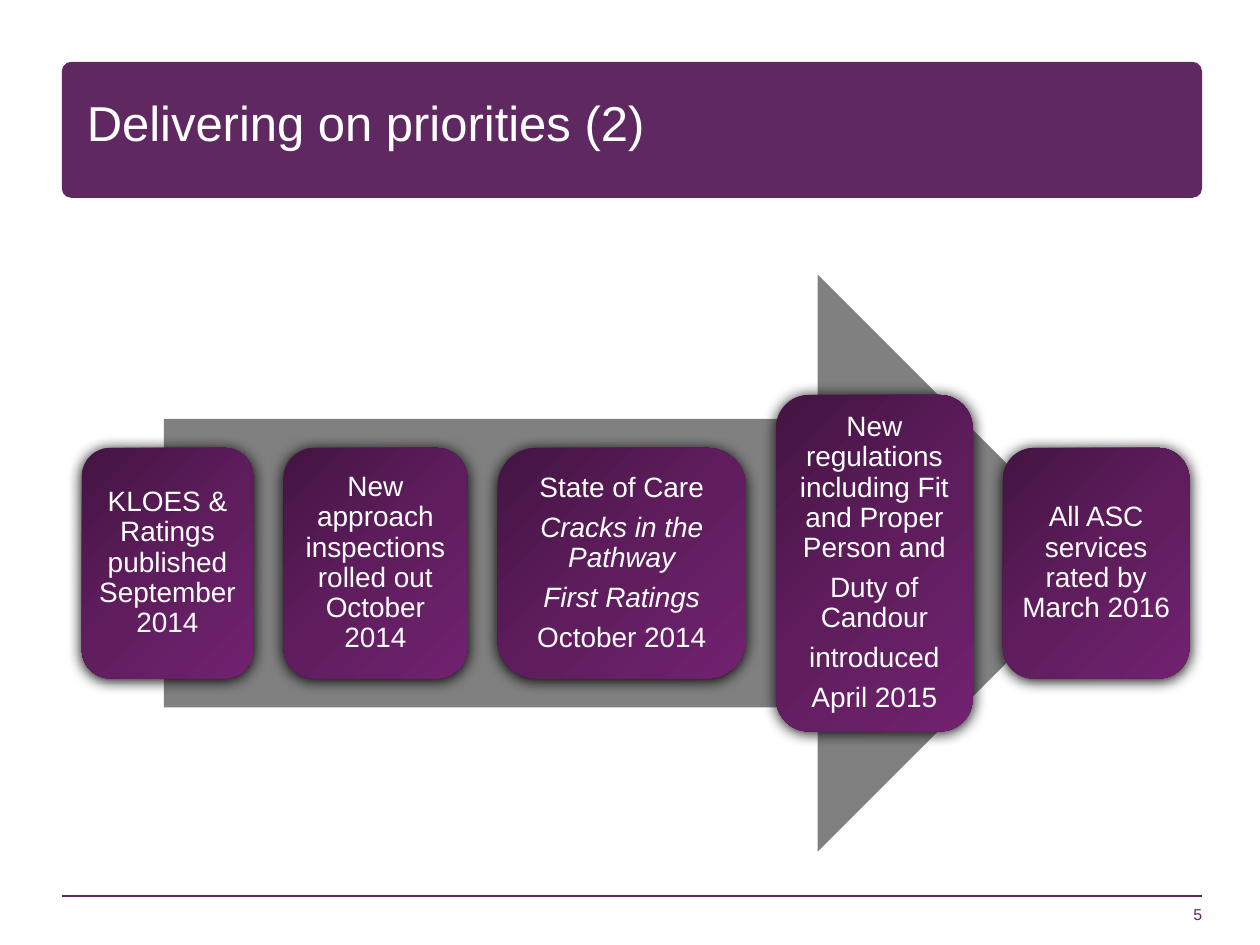
from lxml import etree
from pptx import Presentation
from pptx.dml.color import RGBColor
from pptx.enum.shapes import MSO_CONNECTOR, MSO_SHAPE
from pptx.enum.text import MSO_ANCHOR, PP_ALIGN
from pptx.oxml import parse_xml
from pptx.oxml.ns import nsdecls, qn
from pptx.util import Inches, Pt

# Content: (width, height, [(paragraph, italic), ...])
TITLE = "Delivering on priorities (2)"
PAGE_NUMBER = "5"
MILESTONES = [
    (1.36, 1.83, [("KLOES & Ratings published September 2014", False)]),
    (1.46, 1.83, [("New approach inspections rolled out October 2014", False)]),
    (1.97, 1.83, [("State of Care", False), ("Cracks in the Pathway", True),
                  ("First Ratings", True), ("October 2014", False)]),
    (1.56, 2.67, [("New regulations including Fit and Proper Person and", False),
                  ("Duty of Candour", False), ("introduced", False),
                  ("April 2015", False)]),
    (1.48, 1.83, [("All ASC services rated by March 2016", False)]),
]

# Style
FONT = "Arial"
PURPLE = RGBColor(0x5F, 0x28, 0x61)
GREY = RGBColor(0x80, 0x80, 0x80)
WHITE = RGBColor(0xFF, 0xFF, 0xFF)
GRADIENT = [(0, RGBColor(0x43, 0x14, 0x42)), (50, RGBColor(0x5F, 0x1D, 0x5D)),
            (100, RGBColor(0x71, 0x22, 0x6F))]

# Layout in inches
MARGIN, RIGHT = 0.49, 9.54
ARROW = (1.3, 2.18, 7.48, 4.58)
MIDDLE = ARROW[1] + ARROW[3] / 2
FIRST_LEFT, GAP = 0.65, 0.24
RULE_TOP = 7.11


def add_block(slide, preset, box, color):
    shape = slide.shapes.add_shape(preset, *map(Inches, box))
    shape.shadow.inherit = False
    shape.fill.solid()
    shape.fill.fore_color.rgb = color
    shape.line.fill.background()
    return shape


def set_insets(frame, horizontal, vertical):
    frame.margin_left = frame.margin_right = Inches(horizontal)
    frame.margin_top = frame.margin_bottom = Inches(vertical)


def write(paragraph, text, size, color, align, italic=False):
    paragraph.text = text
    paragraph.alignment = align
    font = paragraph.runs[0].font
    font.name, font.size, font.italic = FONT, Pt(size), italic
    font.color.rgb = color


def add_text(slide, box, text, size, color, align):
    frame = slide.shapes.add_textbox(*map(Inches, box)).text_frame
    frame.word_wrap = True
    write(frame.paragraphs[0], text, size, color, align)
    return frame


def add_gradient_and_shadow(shape):
    properties = shape.fill._xPr
    stops = "".join(f'<a:gs pos="{position * 1000}"><a:srgbClr val="{color}"/></a:gs>'
                    for position, color in GRADIENT)
    gradient = parse_xml(f'<a:gradFill {nsdecls("a")} rotWithShape="1"><a:gsLst>{stops}'
                         '</a:gsLst><a:lin ang="2700000" scaled="0"/></a:gradFill>')
    properties.replace(properties.find(qn("a:solidFill")), gradient)
    shadow = etree.SubElement(properties.find(qn("a:effectLst")), qn("a:outerShdw"),
                              blurRad=str(Pt(8.5)), dist=str(Pt(1)),
                              dir="5400000", rotWithShape="0")
    etree.SubElement(shadow, qn("a:srgbClr"), val="000000")


def add_milestone(slide, left, width, height, lines):
    box = (left, MIDDLE - height / 2, width, height)
    shape = add_block(slide, MSO_SHAPE.ROUNDED_RECTANGLE, box, PURPLE)
    add_gradient_and_shadow(shape)
    frame = shape.text_frame
    frame.word_wrap = True
    frame.vertical_anchor = MSO_ANCHOR.MIDDLE
    set_insets(frame, 0.07, 0.07)
    for index, (text, italic) in enumerate(lines):
        paragraph = frame.add_paragraph() if index else frame.paragraphs[0]
        write(paragraph, text, 16, WHITE, PP_ALIGN.CENTER, italic)
        paragraph.line_spacing = 0.9
        paragraph.space_after = Pt(5.6)


def main():
    presentation = Presentation()
    presentation.slide_width, presentation.slide_height = Inches(10), Inches(7.5)
    slide = presentation.slides.add_slide(presentation.slide_layouts[6])

    # Title banner
    banner = add_block(slide, MSO_SHAPE.ROUNDED_RECTANGLE,
                       (MARGIN, MARGIN, RIGHT - MARGIN, 1.08), PURPLE)
    banner.adjustments[0] = 0.07
    title = add_text(slide, (0.59, 0.76, 6.38, 0.63), TITLE, 28, WHITE, PP_ALIGN.LEFT)
    title.paragraphs[0].line_spacing = 0.85

    # Footer rule and page number
    rule = slide.shapes.add_connector(MSO_CONNECTOR.STRAIGHT, Inches(MARGIN),
                                      Inches(RULE_TOP), Inches(RIGHT), Inches(RULE_TOP))
    rule.line.color.rgb = PURPLE
    rule.line.width = Pt(1)
    etree.SubElement(rule.line._ln.getparent(), qn("a:effectLst"))
    number = add_text(slide, (RIGHT - 2.08, 6.83, 2.08, 0.5), PAGE_NUMBER, 9,
                      PURPLE, PP_ALIGN.RIGHT)
    number.vertical_anchor = MSO_ANCHOR.BOTTOM
    set_insets(number, 0, 0)

    # Timeline arrow with its milestones
    add_block(slide, MSO_SHAPE.RIGHT_ARROW, ARROW, GREY)
    left = FIRST_LEFT
    for width, height, lines in MILESTONES:
        add_milestone(slide, left, width, height, lines)
        left += width + GAP

    presentation.save("out.pptx")


if __name__ == "__main__":
    main()
